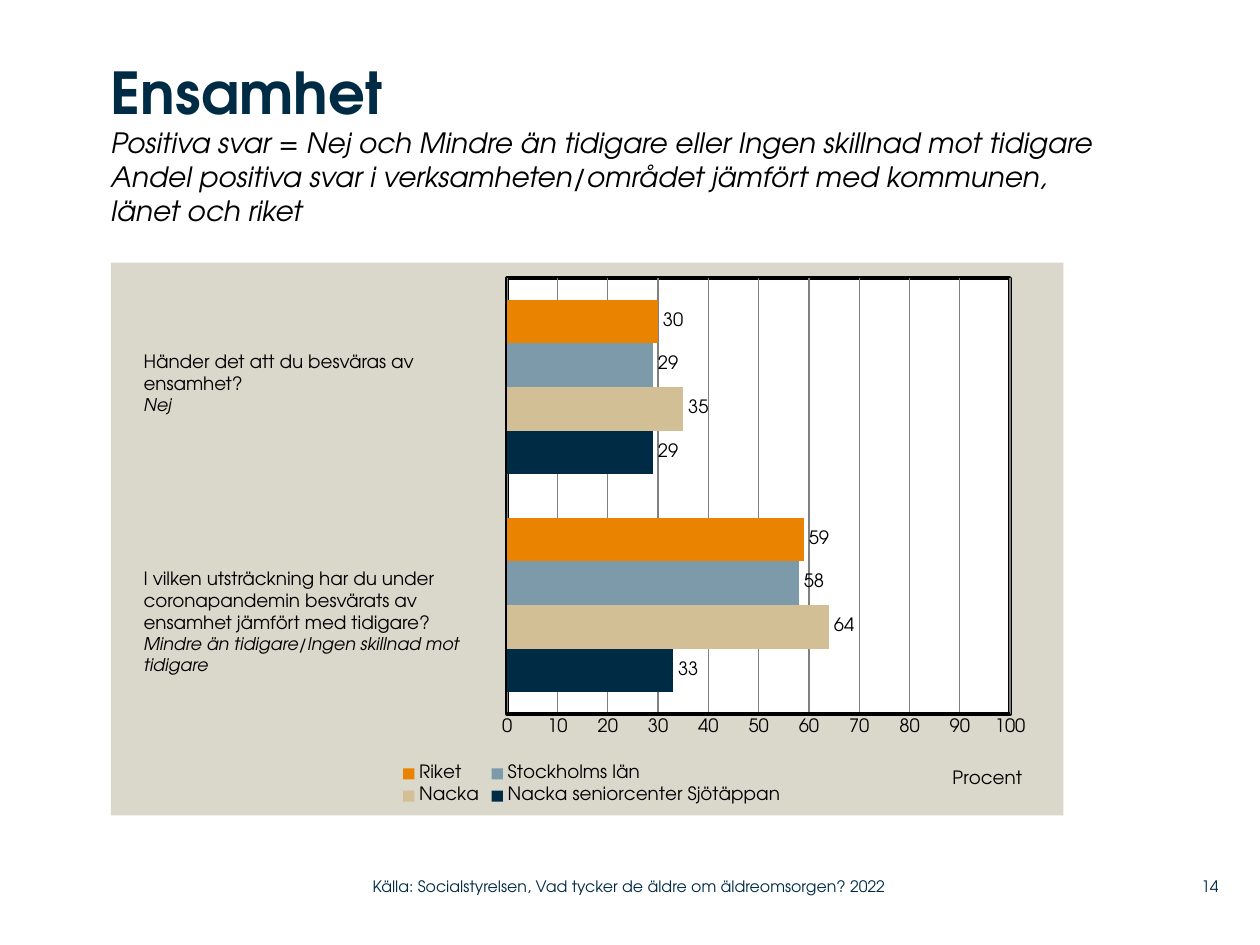
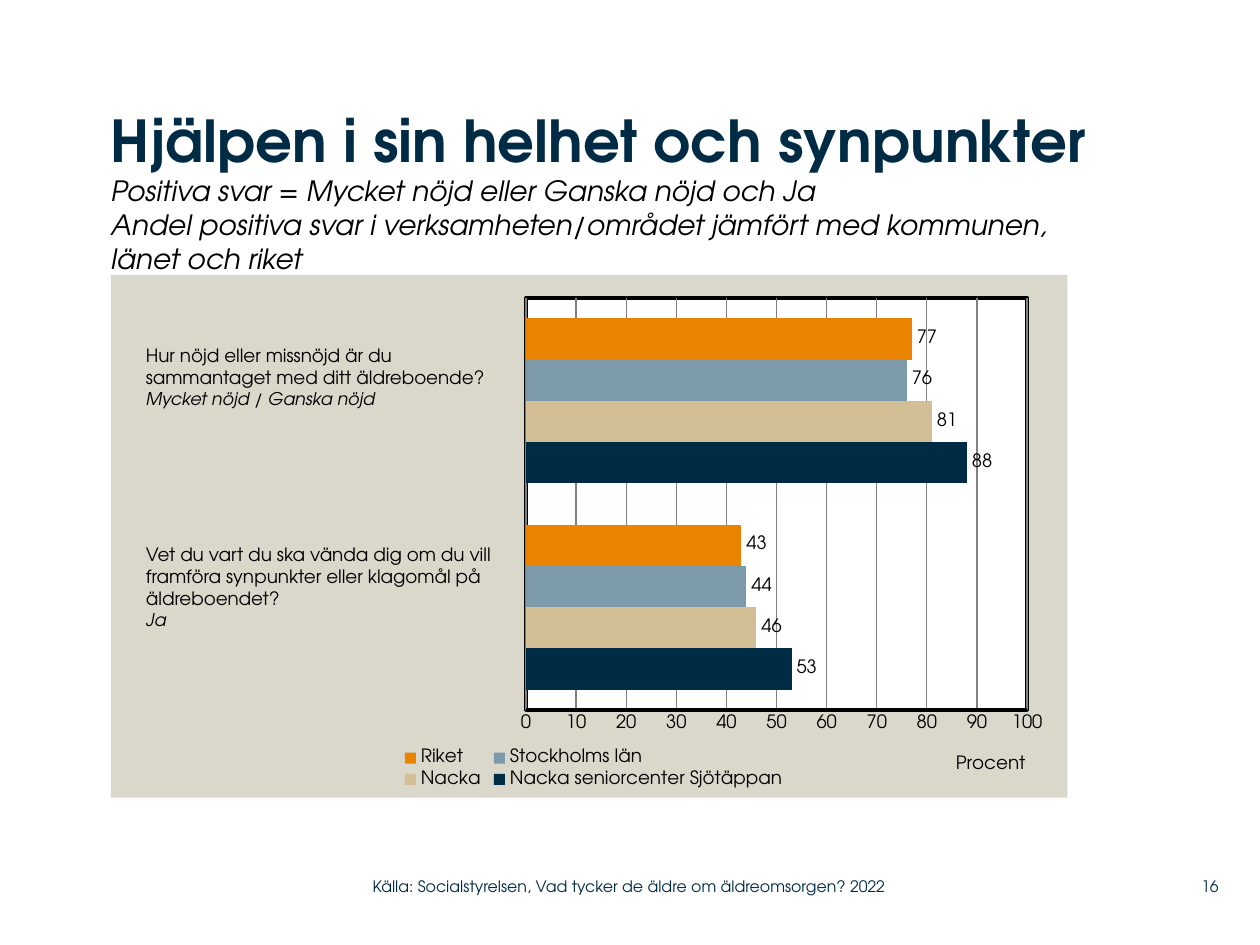
from lxml import etree
from pptx import Presentation
from pptx.chart.data import CategoryChartData
from pptx.dml.color import RGBColor
from pptx.enum.chart import (
    XL_CHART_TYPE as ChartType,
    XL_LABEL_POSITION as LabelPosition,
    XL_LEGEND_POSITION as LegendPosition,
    XL_TICK_MARK as TickMark,
)
from pptx.enum.text import MSO_ANCHOR as Anchor, PP_ALIGN as Align
from pptx.util import Pt

FONT = "TeX Gyre Adventor"
COLORS = {
    "navy": "002B45",
    "sand": "D3BF96",
    "steel": "7D9AAA",
    "orange": "E98300",
    "panel": "DAD7CB",
    "white": "FFFFFF",
    "black": "000000",
    "grid": "808080",
}
SERIES = [
    ("Nacka seniorcenter Sjötäppan", "navy"),
    ("Nacka", "sand"),
    ("Stockholms län", "steel"),
    ("Riket", "orange"),
]
LEFT = 63.4
COMPARISON = ("Andel positiva svar i verksamheten/området jämfört med kommunen, "
              "länet och riket")
SOURCE = "Källa: Socialstyrelsen, Vad tycker de äldre om äldreomsorgen? 2022"
CHART_NS = "http://schemas.openxmlformats.org/drawingml/2006/chart"
DRAWING_NS = "http://schemas.openxmlformats.org/drawingml/2006/main"


def rgb(color):
    return RGBColor.from_string(COLORS[color])


def style_font(font, size, color="black", bold=False, italic=False):
    font.name = FONT
    font.size = Pt(size)
    font.bold = bold
    font.italic = italic
    font.color.rgb = rgb(color)


def add_text(slide, area, lines, inset=True, anchor=Anchor.TOP, align=Align.LEFT):
    """Add a text box; each line is (text, font settings)."""
    box = slide.shapes.add_textbox(*map(Pt, area))
    frame = box.text_frame
    frame.word_wrap = True
    frame.vertical_anchor = anchor
    if not inset:
        frame.margin_left = frame.margin_right = 0
        frame.margin_top = frame.margin_bottom = 0
    for index, (text, settings) in enumerate(lines):
        para = frame.add_paragraph() if index else frame.paragraphs[0]
        para.text = text
        para.alignment = align
        style_font(para.font, **settings)


def add_title(slide, area, title, positive):
    subtitle = {"size": 16, "italic": True}
    add_text(slide, area, [
        (title, {"size": 33, "color": "navy", "bold": True}),
        (positive, subtitle),
        (COMPARISON, subtitle),
    ], inset=False)


def add_question(slide, area, question_lines, answer):
    lines = [(text, {"size": 10.5}) for text in question_lines]
    add_text(slide, area, lines + [(answer, {"size": 10, "italic": True})])


def add_footer(slide, number):
    small = {"size": 9, "color": "navy"}
    add_text(slide, (213, 496, 319, 21), [(SOURCE, small)],
             inset=False, anchor=Anchor.MIDDLE)
    add_text(slide, (662.4, 496, 34, 21), [(number, small)],
             inset=False, anchor=Anchor.MIDDLE, align=Align.RIGHT)


def place(element, index, target=None, **fractions):
    """Give a chart part a manual layout, in fractions of the chart area."""
    for old in element.findall(f"{{{CHART_NS}}}layout"):
        element.remove(old)
    layout = etree.Element(f"{{{CHART_NS}}}layout")
    manual = etree.SubElement(layout, f"{{{CHART_NS}}}manualLayout")
    values = {"layoutTarget": target} if target else {}
    values |= {"xMode": "edge", "yMode": "edge"} | fractions
    for name, value in values.items():
        etree.SubElement(manual, f"{{{CHART_NS}}}{name}", val=str(value))
    element.insert(index, layout)


def area_format(fill, line=None):
    """Make the shape properties of a chart or plot area."""
    def solid(color):
        return f'<a:solidFill><a:srgbClr val="{COLORS[color]}"/></a:solidFill>'

    border = f'<a:ln w="{Pt(2)}">{solid(line)}</a:ln>' if line else "<a:ln><a:noFill/></a:ln>"
    return etree.fromstring(
        f'<c:spPr xmlns:c="{CHART_NS}" xmlns:a="{DRAWING_NS}">{solid(fill)}{border}</c:spPr>')


def format_percent_axis(axis):
    axis.minimum_scale, axis.maximum_scale, axis.major_unit = 0, 100, 10
    axis.major_tick_mark = axis.minor_tick_mark = TickMark.NONE
    axis.format.line.width = Pt(2)
    axis.format.line.color.rgb = rgb("black")
    axis.has_major_gridlines = True
    axis.major_gridlines.format.line.width = Pt(0.75)
    axis.major_gridlines.format.line.color.rgb = rgb("grid")
    para = axis.axis_title.text_frame.paragraphs[0]
    para.text = "Procent"
    style_font(para.font, 10.5)


def add_bar_chart(slide, area, values, plot_area):
    """Add the comparison chart; values holds one pair per series."""
    data = CategoryChartData()
    data.categories = ["1", "2"]
    for (name, _), pair in zip(SERIES, values):
        data.add_series(name, pair)
    chart = slide.shapes.add_chart(
        ChartType.BAR_CLUSTERED, *map(Pt, area), data).chart
    style_font(chart.font, 10.5)
    chart.has_title = False
    chart.category_axis.visible = False
    format_percent_axis(chart.value_axis)

    plot = chart.plots[0]
    plot.gap_width, plot.overlap = 100, 0
    plot.vary_by_categories = False
    for series, (_, color) in zip(plot.series, SERIES):
        series.format.fill.solid()
        series.format.fill.fore_color.rgb = rgb(color)
        labels = series.data_labels
        labels.show_value = True
        labels.position = LabelPosition.OUTSIDE_END
        style_font(labels.font, 10.5)

    chart.has_legend = True
    chart.legend.position = LegendPosition.BOTTOM
    chart.legend.include_in_layout = False
    style_font(chart.legend.font, 10.5)

    root = chart.element
    plot_element = root.xpath("c:chart/c:plotArea")[0]
    plot_element.append(area_format("white", "black"))
    root.xpath("c:chart")[0].addnext(area_format("panel"))
    place(plot_element, 0, "inner", **dict(zip("xywh", plot_area)))
    place(root.xpath("c:chart/c:legend")[0], 1, x=0.3, y=0.9, w=0.41, h=0.09)
    place(root.xpath(".//c:valAx/c:title")[0], 1, x=0.88, y=0.91)


def add_loneliness_slide(deck):
    slide = deck.slides.add_slide(deck.slide_layouts[6])
    add_title(slide, (LEFT, 32.4, 563, 118), "Ensamhet",
              "Positiva svar = Nej och Mindre än tidigare eller "
              "Ingen skillnad mot tidigare")
    add_bar_chart(slide, (LEFT, 150, 544.3, 316),
                  [(33, 29), (64, 35), (58, 29), (59, 30)],
                  (0.416, 0.028, 0.528, 0.789))
    add_question(slide, (75, 320.4, 211.7, 70),
                 ["I vilken utsträckning har du under coronapandemin besvärats "
                  "av ensamhet jämfört med tidigare?"],
                 "Mindre än tidigare/Ingen skillnad mot tidigare")
    add_question(slide, (75, 196.5, 211.7, 45),
                 ["Händer det att du besväras av", "ensamhet?"], "Nej")
    add_footer(slide, "14")


def add_satisfaction_slide(deck):
    slide = deck.slides.add_slide(deck.slide_layouts[6])
    add_title(slide, (LEFT, 59.8, 563, 96.5), "Hjälpen i sin helhet och synpunkter",
              "Positiva svar = Mycket nöjd eller Ganska nöjd och Ja")
    add_bar_chart(slide, (LEFT, 157, 546.5, 298.8),
                  [(53, 88), (46, 81), (44, 76), (43, 77)],
                  (0.434, 0.044, 0.524, 0.789))
    add_question(slide, (76.3, 193, 223.2, 58.3),
                 ["Hur nöjd eller missnöjd är du",
                  "sammantaget med ditt äldreboende?"],
                 "Mycket nöjd / Ganska nöjd")
    add_question(slide, (76.3, 306.7, 219.6, 58.3),
                 ["Vet du vart du ska vända dig om du vill framföra synpunkter "
                  "eller klagomål på äldreboendet?"], "Ja")
    add_footer(slide, "16")


def main():
    deck = Presentation()
    deck.slide_width, deck.slide_height = Pt(720), Pt(540)
    add_loneliness_slide(deck)
    add_satisfaction_slide(deck)
    deck.save("out.pptx")


if __name__ == "__main__":
    main()
